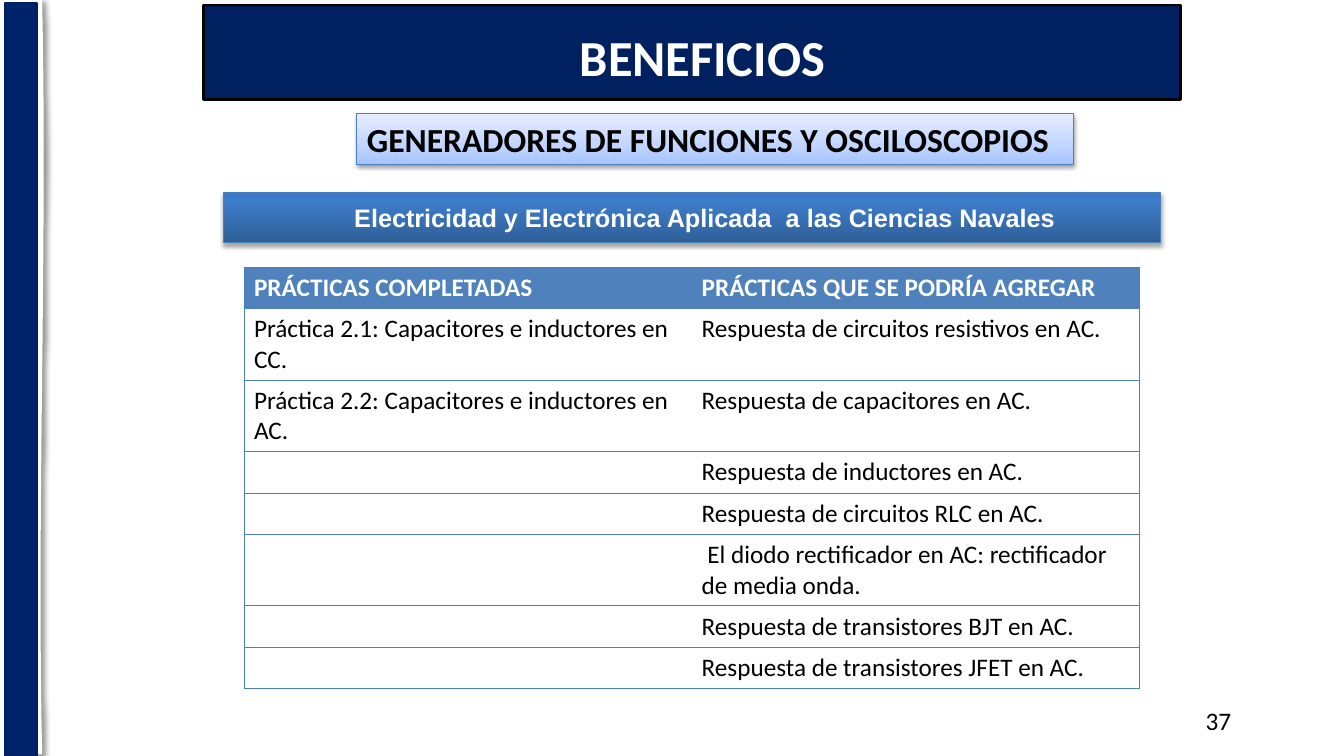
from copy import deepcopy

from pptx import Presentation
from pptx.dml.color import RGBColor
from pptx.enum.shapes import MSO_SHAPE
from pptx.enum.text import MSO_ANCHOR, MSO_AUTO_SIZE, PP_ALIGN
from pptx.oxml import parse_xml
from pptx.oxml.ns import nsdecls, qn
from pptx.util import Inches, Pt

TITLE = "BENEFICIOS "
EQUIPMENT = "GENERADORES DE FUNCIONES Y OSCILOSCOPIOS"
COURSE = "Electricidad y Electrónica Aplicada  a las Ciencias Navales "
PAGE_NUMBER = "37"
PRACTICES = [
    ("PRÁCTICAS COMPLETADAS", "PRÁCTICAS QUE SE PODRÍA AGREGAR"),
    ("Práctica 2.1: Capacitores e inductores en CC.", "Respuesta de circuitos resistivos en AC."),
    ("Práctica 2.2: Capacitores e inductores en AC.", "Respuesta de capacitores en AC."),
    ("", "Respuesta de inductores en AC."),
    ("", "Respuesta de circuitos RLC en AC."),
    ("", " El diodo rectificador en AC: rectificador de media onda."),
    ("", "Respuesta de transistores BJT en AC."),
    ("", "Respuesta de transistores JFET en AC."),
]

WHITE, BLACK, NAVY, EDGE, HEADER = "FFFFFF", "000000", "002060", "4B7EBC", "4F81BD"
COURSE_GRADIENT = [(0, "2F5F99"), (0.8, "3D7CC7"), (1, "3A7CCB")]
EQUIPMENT_GRADIENT = [(0, "A4C4FF"), (0.35, "BFD4FF"), (1, "E6EEFF")]
TITLE_FONT = {"name": "Calibri", "size": Pt(36), "bold": True}
EQUIPMENT_FONT = {"name": "Calibri", "size": Pt(24), "bold": True}
COURSE_FONT = {"name": "Arial", "size": Pt(18), "bold": True}
HEADER_FONT = {"name": "Calibri", "size": Pt(18), "bold": True}
BODY_FONT = {"name": "Calibri", "size": Pt(18), "bold": False}
FRAME = {"word_wrap": True, "auto_size": MSO_AUTO_SIZE.NONE, "vertical_anchor": MSO_ANCHOR.TOP}
ROW_HEIGHT = 0.41
NO_GRID_STYLE = "{2D5ABB26-0587-4C30-8999-92F81FD0307C}"


def color(value):
    return RGBColor.from_string(value)


def apply(target, values):
    for name, value in values.items():
        setattr(target, name, value)


def write(frame, text, font, text_color, alignment=PP_ALIGN.LEFT):
    paragraph = frame.paragraphs[0]
    paragraph.alignment = alignment
    if text:
        run = paragraph.add_run()
        run.text = text
        apply(run.font, font)
        run.font.color.rgb = color(text_color)


def add_panel(slide, kind, box, fill, line, line_width, shadow=None):
    shape = slide.shapes.add_shape(kind, *map(Inches, box))
    shape.shadow.inherit = False
    if isinstance(fill, str):
        shape.fill.solid()
        shape.fill.fore_color.rgb = color(fill)
    else:
        paint_gradient(shape, fill)
    shape.line.color.rgb = color(line)
    shape.line.width = Pt(line_width)
    if shadow:
        alpha, blur, distance, angle = shadow
        shape.element.spPr.find(qn("a:effectLst")).append(parse_xml(
            f'<a:outerShdw {nsdecls("a")} blurRad="{Pt(blur)}" dist="{Pt(distance)}" '
            f'dir="{angle * 60000}" rotWithShape="0"><a:srgbClr val="{BLACK}">'
            f'<a:alpha val="{alpha * 1000}"/></a:srgbClr></a:outerShdw>'))
    return shape


def paint_gradient(shape, colors):
    shape.fill.gradient()
    shape.fill.gradient_angle = 90
    stops = shape.element.spPr.find(".//" + qn("a:gsLst"))
    while len(stops) < len(colors):
        stops.append(deepcopy(stops[-1]))
    for stop, (position, value) in zip(shape.fill.gradient_stops, colors):
        stop.position = position
        stop.color.rgb = color(value)


def add_text(slide, box, text, font, text_color, alignment=PP_ALIGN.LEFT):
    shape = slide.shapes.add_textbox(*map(Inches, box))
    apply(shape.text_frame, FRAME)
    write(shape.text_frame, text, font, text_color, alignment)


def add_practices(slide):
    count = len(PRACTICES)
    frame = slide.shapes.add_table(
        count, 2, Inches(2.42), Inches(2.65), Inches(8.88), Inches(ROW_HEIGHT * count))
    table = frame.table
    frame.element.find(".//" + qn("a:tableStyleId")).text = NO_GRID_STYLE
    for row_index, texts in enumerate(PRACTICES):
        is_header = row_index == 0
        font = HEADER_FONT if is_header else BODY_FONT
        for column_index, text in enumerate(texts):
            cell = table.cell(row_index, column_index)
            write(cell.text_frame, text, font, WHITE if is_header else BLACK)
            outer_side = "LR"[column_index]
            properties = cell._tc.get_or_add_tcPr()
            for side in (outer_side, "T", "B"):
                properties.append(parse_xml(
                    f'<a:ln{side} {nsdecls("a")} w="{Pt(0.75)}"><a:solidFill>'
                    f'<a:srgbClr val="{EDGE}"/></a:solidFill></a:ln{side}>'))
            cell.fill.solid()
            cell.fill.fore_color.rgb = color(HEADER if is_header else WHITE)


def main():
    presentation = Presentation()
    presentation.slide_width = Inches(13.33)
    presentation.slide_height = Inches(7.5)
    slide = presentation.slides.add_slide(presentation.slide_layouts[5])

    wave = add_panel(slide, MSO_SHAPE.WAVE, (-3.38, 3.67, 7.47, 0.13),
                     WHITE, WHITE, 2, (40, 4, 3, 45))
    wave.rotation = 90
    add_panel(slide, MSO_SHAPE.RECTANGLE, (0.05, 0.03, 0.31, 7.47), "00246C", NAVY, 2)
    banner = add_panel(slide, MSO_SHAPE.RECTANGLE, (2.02, 0.05, 9.69, 0.94), NAVY, BLACK, 2)

    title = slide.shapes.title
    apply(title, {"left": Inches(2.97), "top": Inches(0.21),
                  "width": Inches(8.11), "height": Inches(0.71)})
    apply(title.text_frame, FRAME)
    write(title.text_frame, TITLE, TITLE_FONT, WHITE, PP_ALIGN.CENTER)
    banner.element.addnext(title.element)

    add_panel(slide, MSO_SHAPE.RECTANGLE, (2.22, 1.91, 9.29, 0.5),
              COURSE_GRADIENT, EDGE, 0.75, (35, 3.1, 1.8, 90))
    add_text(slide, (2.81, 1.96, 8.43, 0.4), COURSE, COURSE_FONT, WHITE, PP_ALIGN.CENTER)
    add_practices(slide)
    add_text(slide, (11.86, 6.95, 0.8, 0.4), PAGE_NUMBER, BODY_FONT, BLACK)

    equipment = add_panel(slide, MSO_SHAPE.RECTANGLE, (3.54, 1.13, 7.11, 0.5),
                          EQUIPMENT_GRADIENT, EDGE, 0.75, (38, 3.1, 1.6, 90))
    apply(equipment.text_frame, FRAME)
    write(equipment.text_frame, EQUIPMENT, EQUIPMENT_FONT, BLACK)

    presentation.save("out.pptx")


if __name__ == "__main__":
    main()
